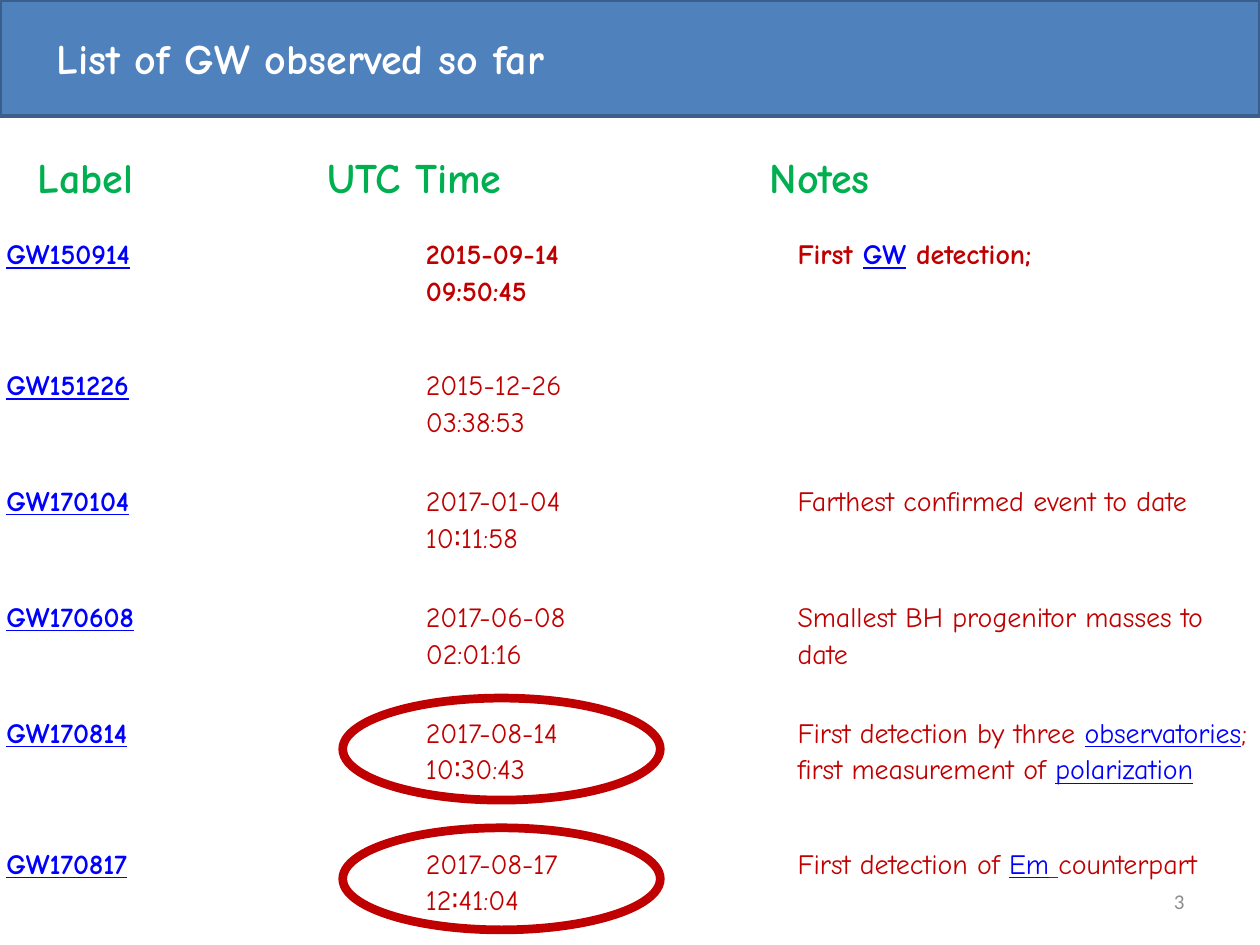
from lxml import etree
from pptx import Presentation
from pptx.dml.color import RGBColor
from pptx.enum.shapes import MSO_SHAPE
from pptx.enum.text import MSO_ANCHOR, PP_ALIGN
from pptx.oxml.ns import qn
from pptx.util import Emu, Inches, Pt

RECT, OVAL = MSO_SHAPE.RECTANGLE, MSO_SHAPE.OVAL
MIDDLE, RIGHT = MSO_ANCHOR.MIDDLE, PP_ALIGN.RIGHT

# Content: each note is a list of (text, style) runs
TITLE = "List of GW observed so far"
HEADINGS = ["Label", "UTC Time", "Notes"]
EVENTS = [
    ("GW150914", "2015-09-14", "09:50:45",
     [("First\u00a0", "plain"), ("GW", "link"), ("\u00a0detection;", "plain")]),
    ("GW151226", "2015-12-26", "03:38:53", []),
    ("GW170104", "2017-01-04", "10∶11:58",
     [("Farthest confirmed event to date", "plain")]),
    ("GW170608", "2017-06-08", "02:01:16",
     [("Smallest BH progenitor masses to date", "plain")]),
    ("GW170814", "2017-08-14", "10∶30:43",
     [("First detection by three\u00a0", "plain"), ("observatories", "link"),
      ("; first measurement of\u00a0", "plain"), ("polarization", "link")]),
    ("GW170817", "2017-08-17", "12∶41:04",
     [("First detection of\u00a0", "plain"), ("Em", "link"),
      (" ", "gap"), ("counterpart", "plain")]),
]
PAGE = "3"

# Look
COLORS = {"bar": "4F81BD", "edge": "3A5F8C", "white": "FFFFFF", "red": "C00000",
          "blue": "0000FF", "green": "00B050", "grey": "8C8C8C"}
HAND = "Comic Neue"
STYLES = {
    "title": {"name": HAND, "size": 24, "color": "white", "bold": True},
    "heading": {"name": HAND, "size": 24, "color": "green", "bold": True},
    "plain": {"name": HAND, "size": 16, "color": "red", "underline": False},
    "link": {"name": HAND, "size": 16, "color": "blue", "underline": True},
    "gap": {"name": HAND, "size": 16, "color": "red", "underline": True},
    "page": {"name": "Calibri", "size": 12, "color": "grey"},
}

# Grid, in inches
WIDTH, HEIGHT = 10, 7.5
COLS = [3.33, 2.95, 3.72]
ROWS = [1.04, 0.92, 0.92, 0.92, 1.04, 1.4]
TABLE_LEFT, TABLE_TOP = -0.02, 1.86
HEADING_TABS = [2.3, 5.81]
RING_TOP, RING_STEP, RING_COUNT = 5.54, 1.03, 2


def rgb(name):
    return RGBColor.from_string(COLORS[name])


def add_run(p, text, style, **extra):
    r = p.add_run()
    r.text = text
    for key, value in {**STYLES[style], **extra}.items():
        if key == "color":
            r.font.color.rgb = rgb(value)
        else:
            setattr(r.font, key, Pt(value) if key == "size" else value)


def add_text(s, box, text, style):
    tf = s.shapes.add_textbox(*map(Inches, box)).text_frame
    tf.word_wrap = True
    add_run(tf.paragraphs[0], text, style)
    return tf


def add_outline(s, kind, box, line, width, fill=None):
    sp = s.shapes.add_shape(kind, *map(Inches, box))
    sp.shadow.inherit = False
    if fill:
        sp.fill.solid()
        sp.fill.fore_color.rgb = rgb(fill)
    else:
        sp.fill.background()
    sp.line.color.rgb = rgb(line)
    sp.line.width = Pt(width)


def add_borders(cell, widths):
    tcPr = cell._tc.get_or_add_tcPr()
    for side, width in widths.items():
        ln = etree.SubElement(tcPr, qn(f"a:ln{side}"), w=str(Pt(width)))
        fill = etree.SubElement(ln, qn("a:solidFill"))
        etree.SubElement(fill, qn("a:srgbClr"), val=COLORS["white"])


prs = Presentation()
prs.slide_width, prs.slide_height = Inches(WIDTH), Inches(HEIGHT)
s = prs.slides.add_slide(prs.slide_layouts[6])

# Title bar
add_outline(s, RECT, (0, 0, WIDTH, 0.92), "edge", 2, fill="bar")
add_text(s, (0.35, 0.21, 6.06, 0.5), TITLE, "title")

# Event table
table = s.shapes.add_table(len(ROWS), len(COLS), Inches(TABLE_LEFT), Inches(TABLE_TOP),
                           Inches(sum(COLS)), Inches(sum(ROWS))).table
table.first_row = table.horz_banding = False
for col, width in zip(table.columns, COLS):
    col.width = Inches(width)
for row, height in zip(table.rows, ROWS):
    row.height = Inches(height)

for i, (label, date, time, note) in enumerate(EVENTS):
    first = i == 0
    cells = [table.cell(i, j) for j in range(len(COLS))]
    for cell in cells:
        cell.margin_left = cell.margin_right = Inches(0.07)
        cell.margin_top = cell.margin_bottom = Emu(0)
        add_borders(cell, {"L": 1, "R": 1, "T": 3 if i == 1 else 1, "B": 3 if first else 1})
        cell.fill.background()
        cell.text_frame.paragraphs[0].line_spacing = 1.15
    name_p, time_p, note_p = (c.text_frame.paragraphs[0] for c in cells)
    add_run(name_p, label, "link", bold=True)
    add_run(time_p, date, "plain", bold=first)
    time_p.add_line_break()
    add_run(time_p, time, "plain", bold=first)
    for text, style in note:
        add_run(note_p, text, style, bold=first)

# Column headings, spaced by tab stops
tf = add_text(s, (0.2, 1.15, 9.61, 0.5), "\t".join(HEADINGS), "heading")
tabs = etree.SubElement(tf.paragraphs[0]._p.get_or_add_pPr(), qn("a:tabLst"))
for stop in HEADING_TABS:
    etree.SubElement(tabs, qn("a:tab"), pos=str(Inches(stop)), algn="l")

# Rings around the last two times
for k in range(RING_COUNT):
    add_outline(s, OVAL, (2.72, RING_TOP + k * RING_STEP, 2.52, 0.81), "red", 5)

# Page number
tf = add_text(s, (7.17, 6.95, 2.33, 0.4), PAGE, "page")
tf.vertical_anchor = MIDDLE
tf.paragraphs[0].alignment = RIGHT

prs.save("out.pptx")
